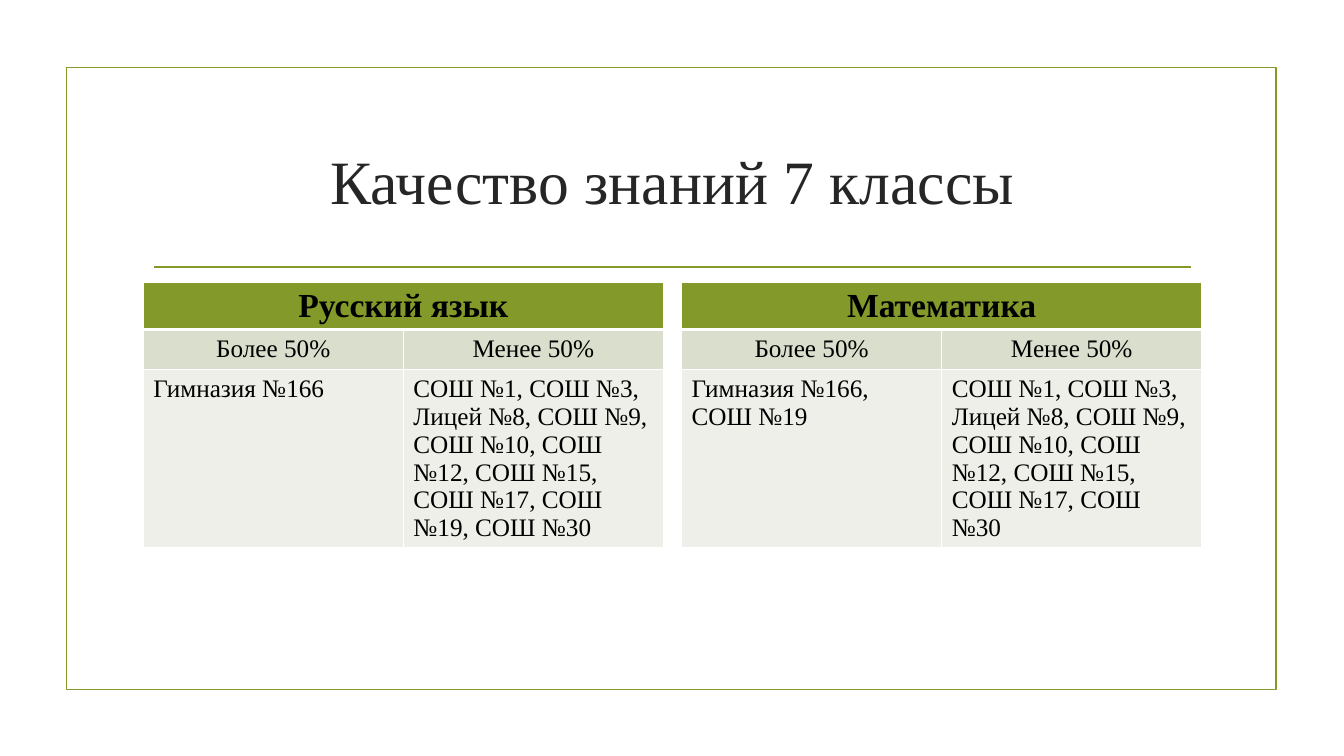
from dataclasses import dataclass

from lxml.etree import SubElement
from pptx import Presentation
from pptx.dml.color import RGBColor
from pptx.enum.shapes import MSO_CONNECTOR, MSO_SHAPE
from pptx.enum.text import MSO_ANCHOR, PP_ALIGN
from pptx.oxml import parse_xml
from pptx.oxml.ns import nsdecls, qn
from pptx.util import Inches, Pt


@dataclass(frozen=True)
class Theme:
    """Colours, type sizes and line widths of the slide."""
    font: str = "Times New Roman"
    accent: str = "83992A"
    title: str = "262626"
    text: str = "000000"
    border: str = "FFFFFF"
    subhead_fill: str = "D9DECD"
    body_fill: str = "EDEFE8"
    title_size: float = 44
    header_size: float = 24
    body_size: float = 18
    rule_width: float = 1.25
    border_width: float = 1
    header_border: float = 3


THEME = Theme()
ROW_HEIGHTS = (0.46, 0.4, 1.76)
SUBHEADS = ("Более 50%", "Менее 50%")
SUBJECTS = (
    ("Русский язык", "Гимназия №166",
     "СОШ №1, СОШ №3, Лицей №8, СОШ №9, СОШ №10, СОШ №12, СОШ №15, "
     "СОШ №17, СОШ №19, СОШ №30"),
    ("Математика", "Гимназия №166, СОШ №19",
     "СОШ №1, СОШ №3, Лицей №8, СОШ №9, СОШ №10, СОШ №12, СОШ №15, "
     "СОШ №17, СОШ №30"),
)


def write(frame, text, size, color, align, bold=False):
    """Put one formatted run into the first paragraph of a text frame."""
    paragraph = frame.paragraphs[0]
    paragraph.alignment = align
    run = paragraph.add_run()
    run.text = text
    run.font.name = THEME.font
    run.font.size = Pt(size)
    run.font.bold = bold
    run.font.color.rgb = RGBColor.from_string(color)


def set_borders(cell, top, bottom):
    """Draw the four cell borders, with their own top and bottom widths."""
    widths = {"lnL": THEME.border_width, "lnR": THEME.border_width,
              "lnT": top, "lnB": bottom}
    properties = cell._tc.get_or_add_tcPr()
    for position, (side, width) in enumerate(widths.items()):
        properties.insert(position, parse_xml(
            f'<a:{side} {nsdecls("a")} w="{Pt(width)}"><a:solidFill>'
            f'<a:srgbClr val="{THEME.border}"/></a:solidFill></a:{side}>'))


def add_frame(slide, left, top, width, height):
    """Outline the content area of the slide."""
    frame = slide.shapes.add_shape(
        MSO_SHAPE.RECTANGLE, Inches(left), Inches(top), Inches(width), Inches(height))
    frame.shadow.inherit = False
    frame.fill.background()
    frame.line.color.rgb = RGBColor.from_string(THEME.accent)
    frame.line.width = Pt(THEME.rule_width)


def add_heading(slide, text, left, top, width, height):
    """Place the title and the rule below it."""
    title = slide.shapes.title
    title.left, title.top = Inches(left), Inches(top)
    title.width, title.height = Inches(width), Inches(height)
    title.text_frame.vertical_anchor = MSO_ANCHOR.MIDDLE
    write(title.text_frame, text, THEME.title_size, THEME.title, PP_ALIGN.CENTER)
    inset, rule_top = 0.11, Inches(top + height + 0.15)
    rule = slide.shapes.add_connector(
        MSO_CONNECTOR.STRAIGHT, Inches(left + inset), rule_top,
        Inches(left + width - inset), rule_top)
    rule.line.color.rgb = RGBColor.from_string(THEME.accent)
    rule.line.width = Pt(THEME.rule_width)
    SubElement(rule._element.spPr, qn("a:effectLst"))


def add_subject_table(slide, subject, left, top, width):
    """Build one subject table: merged header, subheads and school lists."""
    name, *schools = subject
    table = slide.shapes.add_table(
        len(ROW_HEIGHTS), len(SUBHEADS), Inches(left), Inches(top),
        Inches(width), Inches(sum(ROW_HEIGHTS))).table
    for row, height in zip(table.rows, ROW_HEIGHTS):
        row.height = Inches(height)
    table.cell(0, 0).merge(table.cell(0, 1))
    thin, thick = THEME.border_width, THEME.header_border
    rows = (
        ((name,), THEME.accent, THEME.header_size, PP_ALIGN.CENTER, thin, thick),
        (SUBHEADS, THEME.subhead_fill, THEME.body_size, PP_ALIGN.CENTER, thick, thin),
        (schools, THEME.body_fill, THEME.body_size, PP_ALIGN.LEFT, thin, thin),
    )
    for row, (texts, fill, size, align, above, below) in zip(table.rows, rows):
        for cell in row.cells:
            cell.fill.solid()
            cell.fill.fore_color.rgb = RGBColor.from_string(fill)
            set_borders(cell, above, below)
        for cell, text in zip(row.cells, texts):
            write(cell.text_frame, text, size, THEME.text, align, bold=texts == (name,))


def add_subjects(slide, left, top, width, gap):
    """Set the subject tables side by side with an equal gap."""
    table_width = (width - gap * (len(SUBJECTS) - 1)) / len(SUBJECTS)
    for index, subject in enumerate(SUBJECTS):
        add_subject_table(
            slide, subject, left + index * (table_width + gap), top, table_width)


def main():
    """Build and save the slide."""
    presentation = Presentation()
    presentation.slide_width, presentation.slide_height = Inches(13.33), Inches(7.5)
    slide = presentation.slides.add_slide(presentation.slide_layouts[5])
    add_frame(slide, 0.66, 0.67, 12, 6.17)
    add_heading(slide, "Качество знаний 7 классы", 1.42, 1.07, 10.5, 1.43)
    add_subjects(slide, 1.42, 2.8, 10.5, 0.18)
    presentation.save("out.pptx")


if __name__ == "__main__":
    main()
